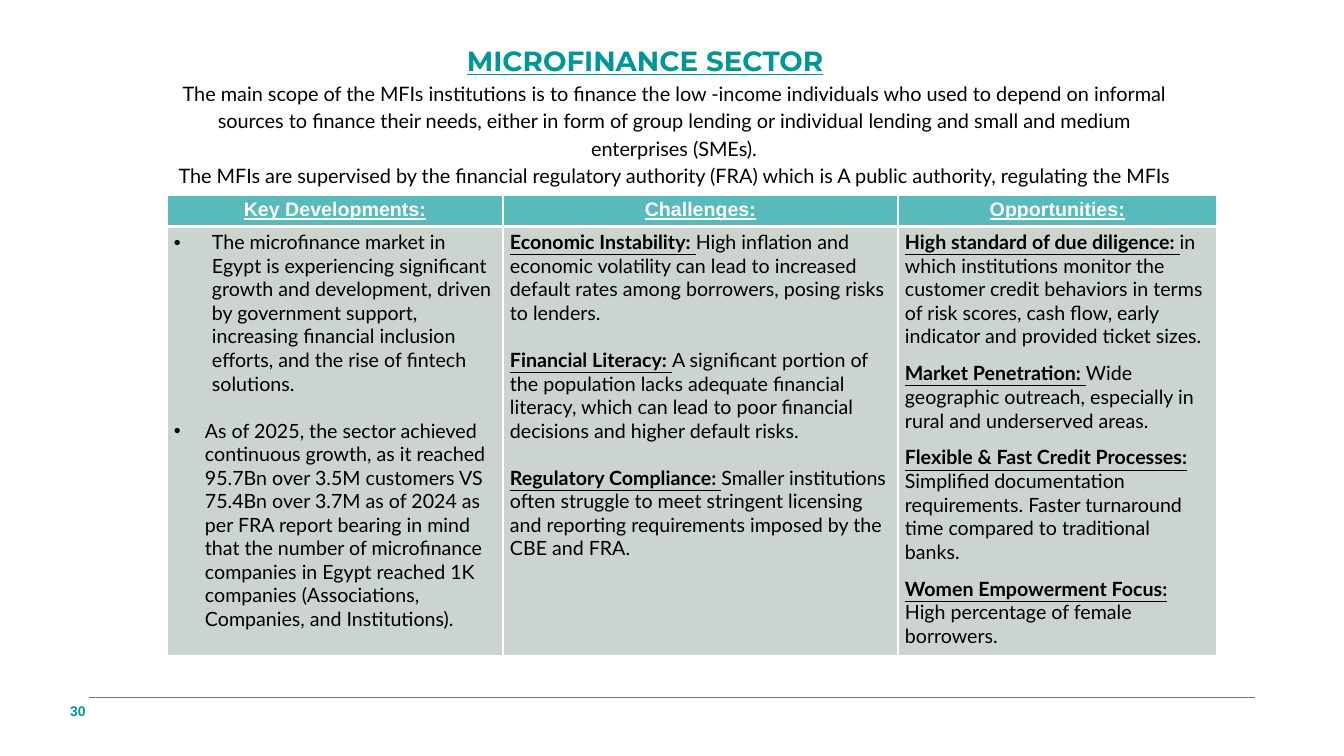
import dataclasses

import lxml.etree
import pptx
import pptx.dml.color
import pptx.enum.shapes
import pptx.enum.text
import pptx.oxml
import pptx.oxml.ns
import pptx.util

ALIGN = pptx.enum.text.PP_ALIGN
ANCHOR = pptx.enum.text.MSO_ANCHOR


@dataclasses.dataclass(frozen=True)
class Theme:
    """Colours and text formats of the slide."""
    header_fill: str = "58BABA"
    body_fill: str = "CCD4D0"
    border: str = "FFFFFF"
    rule: str = "707173"
    title = dict(name="Montserrat", size=19.8, color="009597", bold=True, underline=True)
    intro = dict(name="Lato", size=14.2, color="000000")
    header = dict(name="Arial", size=14, color="FFFFFF", bold=True, underline=True)
    body = dict(name="Lato", size=14, color="000000", bold=False, underline=False)
    lead = dict(name="Lato", size=14, color="000000", bold=True, underline=True)
    page = dict(name="Arial", size=10, color="009597", bold=True)


THEME = Theme()
WIDE_GAP, NARROW_GAP = 16.8, 9.6

INTRO = [
    "The main scope of the MFIs institutions is to finance the low -income individuals who used to "
    "depend on informal sources to finance their needs, either in form of group lending or "
    "individual lending and small and medium enterprises (SMEs).",
    "The MFIs are supervised by the financial regulatory authority (FRA) which is A public "
    "authority, regulating the MFIs",
]
DEVELOPMENTS = [
    (38, "The microfinance market in Egypt is experiencing significant growth and development, "
     "driven by government support, increasing financial inclusion efforts, and the rise of "
     "fintech solutions."),
    (31, "As of 2025, the sector achieved continuous growth, as it reached 95.7Bn over 3.5M "
     "customers VS 75.4Bn over 3.7M as of 2024 as per FRA report bearing in mind that the number "
     "of microfinance companies in Egypt reached 1K companies (Associations, Companies, and "
     "Institutions)."),
]
CHALLENGES = [
    ("Economic Instability: ", "High inflation and economic volatility can lead to increased "
     "default rates among borrowers, posing risks to lenders."),
    ("Financial Literacy: ", "A significant portion of the population lacks adequate financial "
     "literacy, which can lead to poor financial decisions and higher default risks."),
    ("Regulatory Compliance: ", "Smaller institutions often struggle to meet stringent licensing "
     "and reporting requirements imposed by the CBE and FRA."),
]
OPPORTUNITIES = [
    ("High standard of due diligence: ", "in which institutions monitor the customer credit "
     "behaviors in terms of risk scores, cash flow, early indicator and provided ticket sizes."),
    ("Market Penetration: ", "Wide geographic outreach, especially in rural and underserved areas."),
    ("Flexible & Fast Credit Processes:", "\nSimplified documentation requirements. Faster "
     "turnaround time compared to traditional banks."),
    ("Women Empowerment Focus: ", "High percentage of female borrowers."),
]


def px(length):
    """Turn pixels into EMU."""
    return pptx.util.Emu(round(length * 914400 / 100.8))


def rgb(value):
    """Turn a hex string into a colour."""
    return pptx.dml.color.RGBColor.from_string(value)


def add_text(paragraph, text, style):
    """Append a run in the given format."""
    run = paragraph.add_run()
    run.text = text
    for key, value in style.items():
        if key == "color":
            run.font.color.rgb = rgb(value)
        else:
            setattr(run.font, key, pptx.util.Pt(value) if key == "size" else value)


def next_paragraph(frame, gap=0):
    """Return the empty first paragraph, or a new one set off by a gap."""
    if not frame.paragraphs[0].runs:
        return frame.paragraphs[0]
    paragraph = frame.add_paragraph()
    paragraph.space_before = pptx.util.Pt(gap)
    return paragraph


def add_text_box(slide, box, texts, style, align, inset=0, spacing=1.0, anchor=ANCHOR.TOP):
    """Fill a box with equally formatted paragraphs."""
    frame = slide.shapes.add_textbox(*map(px, box)).text_frame
    settings = dict(word_wrap=True, vertical_anchor=anchor, margin_left=px(inset),
                    margin_right=px(inset), margin_top=0, margin_bottom=0)
    for key, value in settings.items():
        setattr(frame, key, value)
    for text in texts:
        paragraph = next_paragraph(frame)
        paragraph.alignment = align
        paragraph.line_spacing = spacing
        add_text(paragraph, text, style)


def add_heading(slide, box):
    """Place the title and the introduction below it."""
    left, top, width, height = box
    title_height, title_shift = 34, 58
    add_text_box(slide, (left, top, width - title_shift, title_height), ["MICROFINANCE SECTOR"],
                 THEME.title, ALIGN.CENTER)
    add_text_box(slide, (left, top + title_height, width, height - title_height), INTRO,
                 THEME.intro, ALIGN.CENTER, inset=7, spacing=1.15)


def add_bullet(paragraph, indent):
    """Give a paragraph a hanging bullet."""
    properties = paragraph._p.get_or_add_pPr()
    properties.set("marL", str(px(indent)))
    properties.set("indent", str(-px(indent)))
    for tag, key, value in (("a:buFont", "typeface", "Arial"), ("a:buChar", "char", "•")):
        lxml.etree.SubElement(properties, pptx.oxml.ns.qn(tag)).set(key, value)


def format_cell(cell, fill, thick_side):
    """Set the margins, fill and white borders of a cell."""
    margins = dict(margin_left=7, margin_right=7, margin_top=4, margin_bottom=4)
    for key, value in margins.items():
        setattr(cell, key, px(value))
    cell.fill.solid()
    cell.fill.fore_color.rgb = rgb(fill)
    properties = cell._tc.get_or_add_tcPr()
    for index, side in enumerate(("lnL", "lnR", "lnT", "lnB")):
        width = pptx.util.Pt(3 if side == thick_side else 1)
        properties.insert(index, pptx.oxml.parse_xml(
            f'<a:{side} {pptx.oxml.ns.nsdecls("a")} w="{width}"><a:solidFill>'
            f'<a:srgbClr val="{THEME.border}"/></a:solidFill></a:{side}>'))


def write_bullets(frame, bullets):
    """Write the bulleted developments."""
    for indent, text in bullets:
        paragraph = next_paragraph(frame, WIDE_GAP)
        add_bullet(paragraph, indent)
        add_text(paragraph, text, THEME.body)


def write_points(frame, points, gap):
    """Write points with an underlined lead; a leading newline starts a new paragraph."""
    for lead, detail in points:
        paragraph = next_paragraph(frame, gap)
        add_text(paragraph, lead, THEME.lead)
        if detail.startswith("\n"):
            paragraph = next_paragraph(frame)
        add_text(paragraph, detail.strip(), THEME.body)


def add_sector_table(slide, box):
    """Place the three-column table of the sector."""
    table = slide.shapes.add_table(2, 3, *map(px, box)).table
    header_height = 31
    for column, width in zip(table.columns, (336, 395, box[2] - 336 - 395)):
        column.width = px(width)
    for row, height in zip(table.rows, (header_height, box[3] - header_height)):
        row.height = px(height)
    for index, heading in enumerate(("Key Developments:", "Challenges:", "Opportunities:")):
        header = table.cell(0, index)
        format_cell(header, THEME.header_fill, "lnB")
        format_cell(table.cell(1, index), THEME.body_fill, "lnT")
        paragraph = header.text_frame.paragraphs[0]
        paragraph.alignment = ALIGN.CENTER
        add_text(paragraph, heading, THEME.header)
    developments, challenges, opportunities = (cell.text_frame for cell in table.rows[1].cells)
    write_bullets(developments, DEVELOPMENTS)
    write_points(challenges, CHALLENGES, WIDE_GAP)
    write_points(opportunities, OPPORTUNITIES, NARROW_GAP)


def add_footer(slide, box):
    """Place the rule and the page number under it."""
    left, top, width, height = box
    rule = slide.shapes.add_connector(pptx.enum.shapes.MSO_CONNECTOR.STRAIGHT,
                                      px(left + 30), px(top), px(left + width), px(top))
    rule.line.color.rgb = rgb(THEME.rule)
    rule.line.width = pptx.util.Pt(0.5)
    lxml.etree.SubElement(rule._element.spPr, pptx.oxml.ns.qn("a:effectLst"))
    add_text_box(slide, (left, top, 59, height), ["30"], THEME.page, ALIGN.LEFT,
                 inset=11, anchor=ANCHOR.MIDDLE)


def main():
    """Build and save the slide."""
    deck = pptx.Presentation()
    deck.slide_width, deck.slide_height = px(1344), px(756)
    slide = deck.slides.add_slide(deck.slide_layouts[6])
    add_heading(slide, (167, 44, 1014, 146))
    add_sector_table(slide, (167, 195, 1050, 460))
    add_footer(slide, (59, 697, 1196, 28))
    deck.save("out.pptx")


if __name__ == "__main__":
    main()
